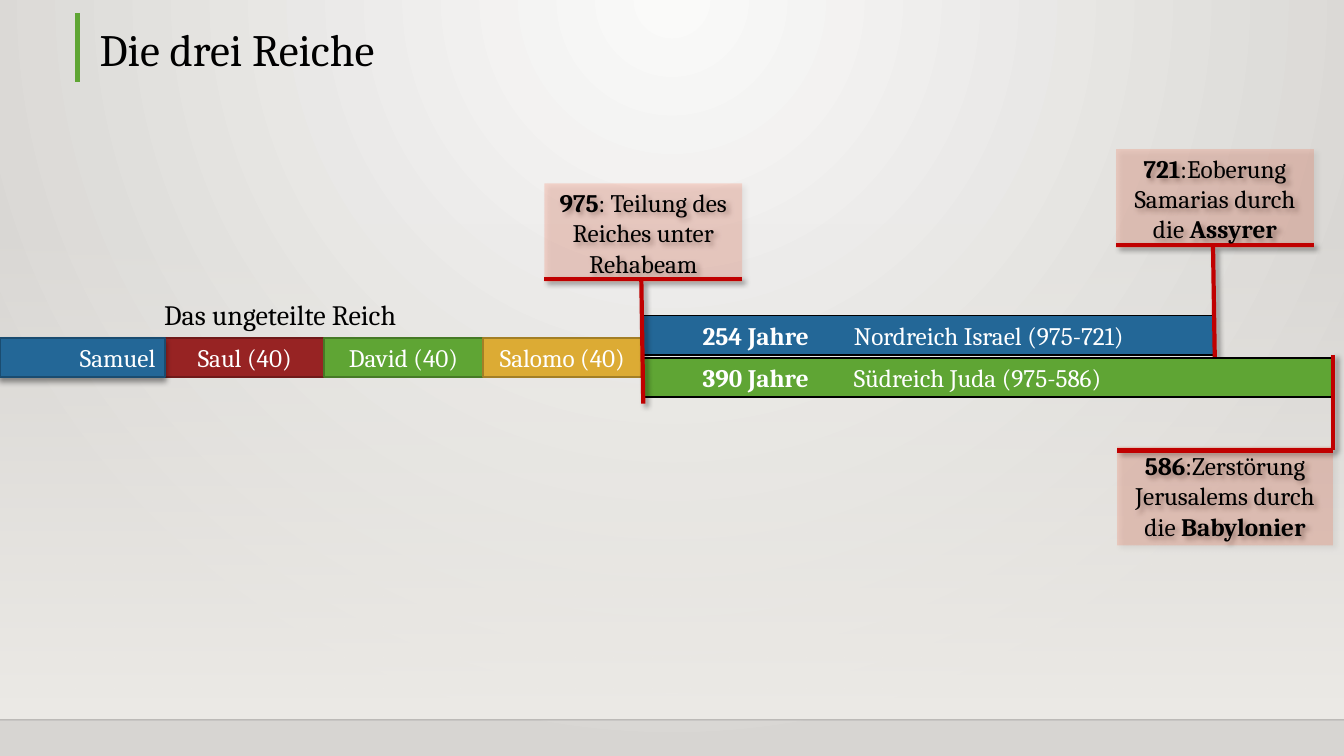
from lxml import etree
from pptx import Presentation
from pptx import util as u
from pptx.dml.color import RGBColor
from pptx.enum import shapes, text
from pptx.oxml.ns import qn

FONT = "Cambria"
HUES = {
    "black": "000000", "white": "FFFFFF",
    "blue": "236797", "navy": "1A4C70",
    "red": "972323", "wine": "701A1A",
    "green": "5FA534", "moss": "467A26",
    "gold": "DCAB34", "bronze": "A37F26",
    "alert": "FF3300", "accent": "C00000",
    "light": "FAFAF9", "stone": "D7D5D2", "floor": "EDEBE7",
}
BAR = 0.39
REIGN = 1.575
SPLIT = 6.37


def hue(name):
    return RGBColor.from_string(HUES[name])


def node(parent, tag, **attrs):
    return etree.SubElement(parent, qn(tag), {k: str(v) for k, v in attrs.items()})


def fade(color, share):
    node(color, "a:alpha", val=share * 1000)


def blend(fill, first, last):
    fill.gradient()
    for stop, name, pos in zip(fill.gradient_stops, (first, last), (0, 1)):
        stop.color.rgb = hue(name)
        stop.position = pos


def shade(shape, angle):
    effects = shape._element.spPr.find(qn("a:effectLst"))
    cast = node(effects, "a:outerShdw", blurRad=u.Pt(4), dist=u.Pt(3),
                dir=angle * 60000, algn="ctr", rotWithShape=0)
    fade(node(cast, "a:srgbClr", val=HUES["black"]), 40)


def style(para, size, color, align=None):
    para.alignment = align
    para.font.name = FONT
    para.font.size = u.Pt(size)
    para.font.color.rgb = hue(color)


def write(para, parts):
    for words, bold in parts:
        run = para.add_run()
        run.text = words
        run.font.bold = bold


def block(slide, kind, box, fill, edge=None, width=1.25):
    shape = slide.shapes.add_shape(kind, *map(u.Inches, box))
    shape.shadow.inherit = False
    shape.fill.solid()
    shape.fill.fore_color.rgb = hue(fill)
    if edge:
        shape.line.color.rgb = hue(edge)
        shape.line.width = u.Pt(width)
    else:
        shape.line.fill.background()
    frame = shape.text_frame
    frame.word_wrap = True
    frame.vertical_anchor = text.MSO_ANCHOR.MIDDLE
    return shape


def rule(slide, start, end, color, width):
    line = slide.shapes.add_connector(
        shapes.MSO_CONNECTOR.STRAIGHT, *map(u.Inches, start + end))
    line.line.color.rgb = hue(color)
    line.line.width = u.Pt(width)
    node(line._element.spPr, "a:effectLst")
    return line


def label(slide, box, words, size):
    frame = slide.shapes.add_textbox(*map(u.Inches, box)).text_frame
    frame.word_wrap = True
    frame.vertical_anchor = text.MSO_ANCHOR.BOTTOM
    para = frame.paragraphs[0]
    para.text = words
    para.line_spacing = 0.9
    style(para, size, "black")


def backdrop(slide, wide, high):
    blend(slide.background.fill, "light", "stone")
    grad = slide._element.find(".//" + qn("a:gradFill"))
    grad.remove(grad.find(qn("a:lin")))
    ring = node(grad, "a:path", path="circle")
    node(ring, "a:fillToRect", l=43000, t=0, r=43000, b=100000)

    base = high - 0.36
    floor = block(slide, shapes.MSO_SHAPE.RECTANGLE, (0, 2.2, wide, base - 2.2), "floor")
    blend(floor.fill, "floor", "floor")
    floor.fill.gradient_angle = 270
    fade(floor._element.spPr.find(".//" + qn("a:srgbClr")), 0)
    edge = rule(slide, (0, base), (wide, base), "black", 1)
    fade(edge._element.spPr.find(".//" + qn("a:srgbClr")), 20)


def heading(slide, left, top, wide, high):
    rule(slide, (left, top), (left, top + high), "green", 3)
    label(slide, (left + 0.12, top, wide, high), "Die drei Reiche", 32)


def reign(slide, box, words, fill, edge, align=text.PP_ALIGN.CENTER):
    shape = block(slide, shapes.MSO_SHAPE.RECTANGLE, box, fill, edge)
    para = shape.text_frame.paragraphs[0]
    para.text = words
    style(para, 18, "white", align)
    return shape


def united(slide, left, top):
    kings = [("Saul (40)", "red", "wine"), ("David (40)", "green", "moss"),
             ("Salomo (40)", "gold", "bronze")]
    for i, (words, fill, edge) in enumerate(kings):
        reign(slide, (left + i * REIGN, top, REIGN, BAR), words, fill, edge)
    judge = reign(slide, (0, top, left, BAR), "Samuel", "blue", "navy",
                  text.PP_ALIGN.RIGHT)
    shade(judge, 90)
    label(slide, (left - 0.11, top - 0.59, 3.01, 0.58), "Das ungeteilte Reich", 20)


def realm(slide, box, years, words, fill):
    shape = block(slide, shapes.MSO_SHAPE.RECTANGLE, box, fill, "black")
    para = shape.text_frame.paragraphs[0]
    tabs = node(para._p.get_or_add_pPr(), "a:tabLst")
    for stop in (0.5, 2):
        node(tabs, "a:tab", pos=u.Inches(stop), algn="l")
    style(para, 18, "white", text.PP_ALIGN.LEFT)
    write(para, [("\t" + years, True), ("\t" + words, False)])


def event(slide, box, parts, adjust):
    left, top, wide, high = box
    turned = (left + (wide - high) / 2, top + (high - wide) / 2, high, wide)
    shape = block(slide, shapes.MSO_SHAPE.LINE_CALLOUT_1_ACCENT_BAR, turned,
                  "alert", "accent", 3)
    shape.rotation = 90
    for i, value in enumerate(adjust):
        shape.adjustments[i] = value
    fade(shape._element.spPr.find(qn("a:solidFill"))[0], 15)
    shade(shape, 45)
    shape.text_frame._txBody.bodyPr.set("vert", "vert270")
    para = shape.text_frame.paragraphs[0]
    style(para, 18, "black", text.PP_ALIGN.CENTER)
    write(para, parts)


def main():
    deck = Presentation()
    deck.slide_width, deck.slide_height = u.Inches(13.33), u.Inches(7.5)
    slide = deck.slides.add_slide(deck.slide_layouts[6])
    down = (0.51, 0.97, 0.5, 2.23)
    up = (0, 0.04, 0, -0.93)

    backdrop(slide, 13.33, 7.5)
    heading(slide, 0.77, 0.13, 11.57, 0.68)
    united(slide, 1.64, 3.35)
    realm(slide, (SPLIT, 3.13, 5.68, BAR), "254 Jahre",
          "Nordreich Israel (975-721)", "blue")
    event(slide, (11.07, 1.48, 1.96, 0.98),
          [("721", True), (":Eoberung Samarias durch die ", False),
           ("Assyrer", True)], down)
    realm(slide, (SPLIT, 3.55, 6.85, BAR), "390 Jahre",
          "Südreich Juda (975-586)", "green")
    event(slide, (5.4, 1.82, 1.96, 0.98),
          [("975", True), (": Teilung des Reiches unter Rehabeam", False)], down)
    event(slide, (11.08, 4.43, 2.14, 0.98),
          [("586", True), (":Zerstörung Jerusalems durch die ", False),
           ("Babylonier", True)], up)
    deck.save("out.pptx")


if __name__ == "__main__":
    main()
